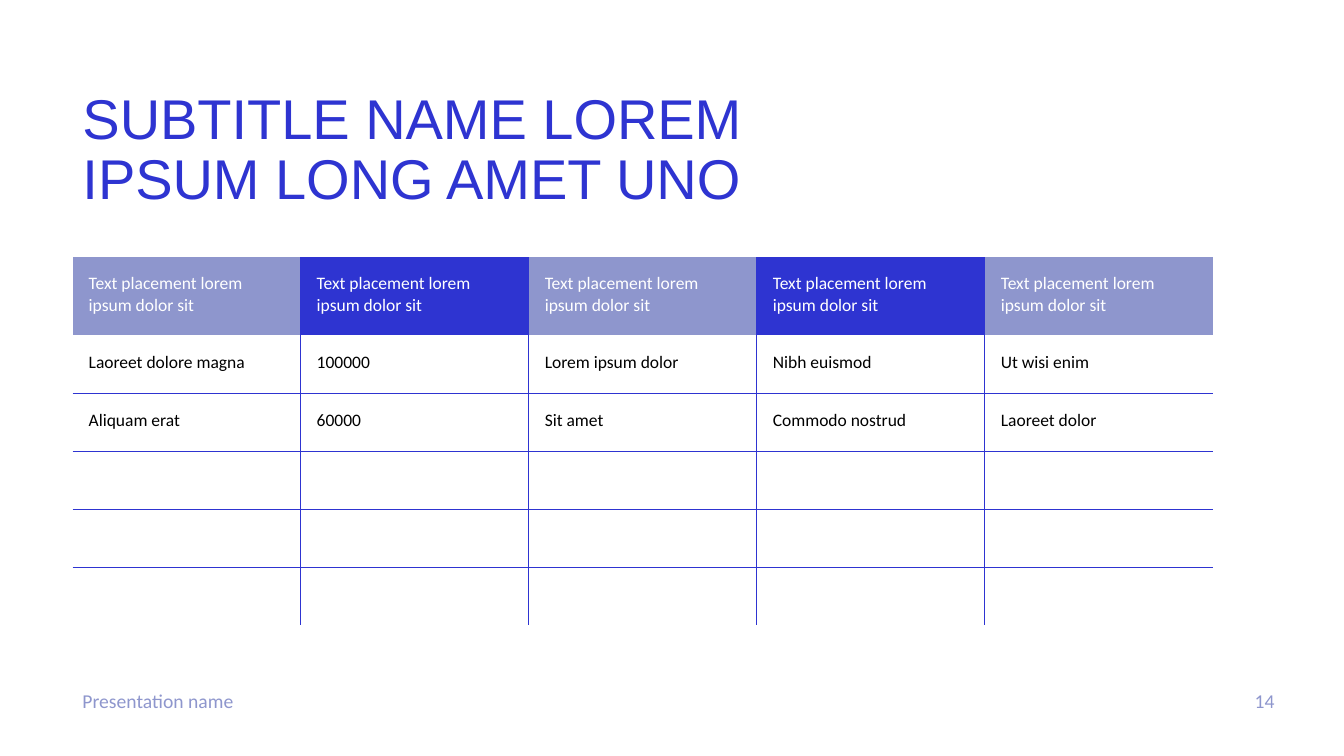
from dataclasses import dataclass

from lxml import etree
from pptx import Presentation
from pptx import util as u
from pptx.dml.color import RGBColor
from pptx.enum import text
from pptx.oxml import ns

WIDE, HIGH = u.Inches(13.33), u.Inches(7.5)
HUES = {"blue": "2E34D1", "lilac": "8E96CD", "white": "FFFFFF", "black": "000000"}
LEFT, SPAN = 5.4, 84.84
COLS, ROWS = 5, 6
HEAD, BODY = 10.27, 7.67
TOP = 34
HEADING = "Text placement lorem ipsum dolor sit"
DATA = [
    [HEADING] * COLS,
    ["Laoreet dolore magna", "100000", "Lorem ipsum dolor", "Nibh euismod", "Ut wisi enim"],
    ["Aliquam erat", "60000", "Sit amet", "Commodo nostrud", "Laoreet dolor"],
]


@dataclass
class Label:
    """Text with its box in percent of the slide."""
    words: str
    left: float
    top: float
    width: float
    height: float
    style: dict


LABELS = [
    Label("SUBTITLE NAME LOREM\vIPSUM LONG AMET UNO", LEFT, 10.8, SPAN, 18.4,
          dict(size=40, face="Arial", hue="blue", gap=0.9,
               anchor=text.MSO_ANCHOR.MIDDLE)),
    Label("Presentation name", LEFT, 90.53, 47.26, 5.07, dict(size=14, hue="lilac")),
    Label("14", 91.67, 90.53, 3.9, 5.33,
          dict(size=14, hue="lilac", align=text.PP_ALIGN.RIGHT)),
]


def across(share: float) -> int:
    """Turn percent of the width into a length."""
    return round(WIDE * share / 100)


def down(share: float) -> int:
    """Turn percent of the height into a length."""
    return round(HIGH * share / 100)


def color(hue: str) -> RGBColor:
    """Look up a named colour."""
    return RGBColor.from_string(HUES[hue])


def write(frame, words: str, *, size: float = 12.5, face: str = "Calibri",
          hue: str = "black", align=text.PP_ALIGN.LEFT, gap: float | None = None,
          anchor=text.MSO_ANCHOR.TOP) -> None:
    """Put formatted text into a frame."""
    frame.word_wrap = True
    frame.vertical_anchor = anchor
    para = frame.paragraphs[0]
    para.text = words
    para.alignment = align
    para.line_spacing = gap
    for run in para.runs:
        run.font.size = u.Pt(size)
        run.font.name = face
        run.font.color.rgb = color(hue)


def place(slide, label: Label) -> None:
    """Draw a label as a text box."""
    box = slide.shapes.add_textbox(across(label.left), down(label.top),
                                   across(label.width), down(label.height))
    write(box.text_frame, label.words, **label.style)


def border(cell, sides: dict[str, bool]) -> None:
    """Rule the chosen sides of a cell and clear the others."""
    props = cell._tc.get_or_add_tcPr()
    for side, shown in sides.items():
        line = etree.SubElement(props, ns.qn(f"a:ln{side}"), w=str(u.Pt(0.5)))
        if shown:
            fill = etree.SubElement(line, ns.qn("a:solidFill"))
            etree.SubElement(fill, ns.qn("a:srgbClr"), val=HUES["blue"])
        else:
            etree.SubElement(line, ns.qn("a:noFill"))


def tint(row: int, col: int) -> str:
    """Choose the fill of a cell."""
    if row:
        return "white"
    return "blue" if col % 2 else "lilac"


def grid(slide) -> None:
    """Draw the table."""
    frame = slide.shapes.add_table(ROWS, COLS, across(LEFT), down(TOP), across(SPAN),
                                   down(HEAD + BODY * (ROWS - 1)))
    table = frame.table
    table.first_row = table.horz_banding = False
    for col in table.columns:
        col.width = across(SPAN / COLS)
    for row, line in enumerate(table.rows):
        line.height = down(BODY if row else HEAD)
        for col, cell in enumerate(line.cells):
            border(cell, {"L": col > 0, "R": col < COLS - 1,
                          "T": row > 1, "B": 0 < row < ROWS - 1})
            cell.fill.solid()
            cell.fill.fore_color.rgb = color(tint(row, col))
            if row < len(DATA):
                cell.margin_left = cell.margin_right = cell.margin_top = u.Inches(0.16)
                cell.margin_bottom = u.Inches(0.2)
                write(cell.text_frame, DATA[row][col], hue="black" if row else "white")


def main() -> None:
    """Build and save the slide."""
    deck = Presentation()
    deck.slide_width, deck.slide_height = WIDE, HIGH
    slide = deck.slides.add_slide(deck.slide_layouts[6])
    for label in LABELS:
        place(slide, label)
    grid(slide)
    deck.save("out.pptx")


if __name__ == "__main__":
    main()
